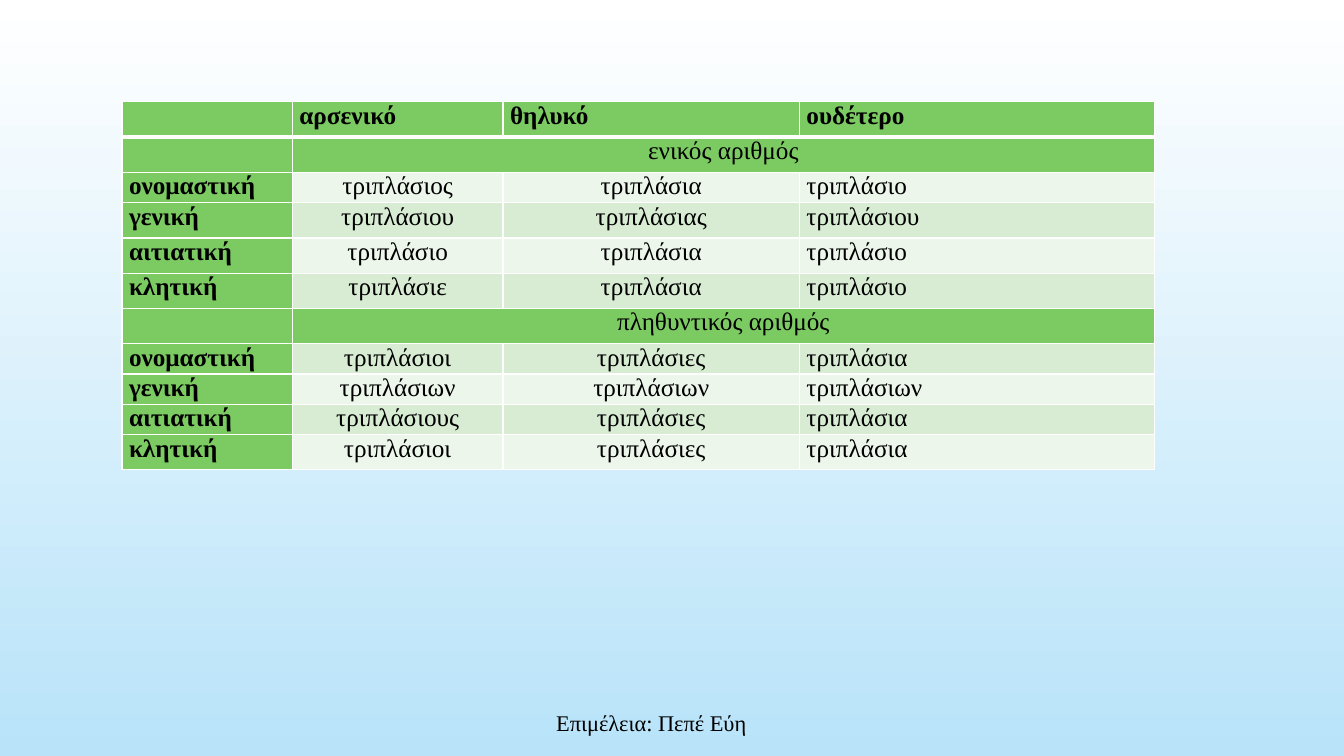
from lxml.etree import SubElement
from pptx import Presentation
from pptx.dml.color import RGBColor
from pptx.enum.text import MSO_ANCHOR, PP_ALIGN
from pptx.oxml.ns import qn
from pptx.util import Inches, Pt

COLORS = {"text": "000000", "line": "FFFFFF", "header": "7CCA62",
          "light": "ECF6EA", "band": "D7ECD3", "sky_top": "FFFFFF", "sky_bottom": "B8E3F9"}
FONT = "Times New Roman"
COLUMN_WIDTHS = [1.69, 2.09, 2.94, 3.52]
TALL, SHORT = 0.35, 0.28
ROW_HEIGHTS = [TALL, TALL, SHORT, TALL, TALL, TALL, TALL, SHORT, SHORT, SHORT, TALL]
NUMBER_ROWS = (1, 6)
DECLENSION = [
    ["", "αρσενικό", "θηλυκό", "ουδέτερο"],
    ["", "ενικός αριθμός", "", ""],
    ["ονομαστική", "τριπλάσιος", "τριπλάσια", "τριπλάσιο"],
    ["γενική", "τριπλάσιου", "τριπλάσιας", "τριπλάσιου"],
    ["αιτιατική", "τριπλάσιο", "τριπλάσια", "τριπλάσιο"],
    ["κλητική", "τριπλάσιε", "τριπλάσια", "τριπλάσιο"],
    ["", "πληθυντικός αριθμός", "", ""],
    ["ονομαστική", "τριπλάσιοι", "τριπλάσιες", "τριπλάσια"],
    ["γενική", "τριπλάσιων", "τριπλάσιων", "τριπλάσιων"],
    ["αιτιατική", "τριπλάσιους", "τριπλάσιες", "τριπλάσια"],
    ["κλητική", "τριπλάσιοι", "τριπλάσιες", "τριπλάσια"],
]


class GrammarSlide:
    def __init__(self, deck):
        self.page = deck.slides.add_slide(deck.slide_layouts[6])

    def color(self, name):
        return RGBColor.from_string(COLORS[name])

    def background(self):
        fill = self.page.background.fill
        fill.gradient()
        fill.gradient_angle = 270
        for stop, position, name in zip(fill.gradient_stops, (0, 1), ("sky_top", "sky_bottom")):
            stop.position = position
            stop.color.rgb = self.color(name)

    def set_text(self, frame, text, size, bold=False, align=PP_ALIGN.LEFT):
        frame.text = text
        para = frame.paragraphs[0]
        para.alignment = align
        for span in para.runs:
            span.font.name = FONT
            span.font.size = Pt(size)
            span.font.bold = bold
            span.font.color.rgb = self.color("text")

    def credit(self, text, left, top, width, height):
        box = self.page.shapes.add_textbox(Inches(left), Inches(top), Inches(width), Inches(height))
        box.text_frame.word_wrap = True
        box.text_frame.vertical_anchor = MSO_ANCHOR.MIDDLE
        self.set_text(box.text_frame, text, 16, align=PP_ALIGN.CENTER)

    def borders(self, cell, bottom):
        properties = cell._tc.get_or_add_tcPr()
        for side, points in (("lnL", 1), ("lnR", 1), ("lnT", 1), ("lnB", bottom)):
            line = SubElement(properties, qn(f"a:{side}"), w=str(Pt(points)))
            solid = SubElement(line, qn("a:solidFill"))
            SubElement(solid, qn("a:srgbClr"), val=COLORS["line"])

    def cell(self, cell, text, row, column):
        heading = row == 0 or column == 0
        centered = not heading and (column < 3 or row in NUMBER_ROWS)
        cell.margin_left = cell.margin_right = Inches(0.07)
        cell.margin_top = cell.margin_bottom = 0
        self.set_text(cell.text_frame, text, 18, heading,
                      PP_ALIGN.CENTER if centered else PP_ALIGN.LEFT)
        self.borders(cell, 3 if row == 0 else 1)
        if heading or row in NUMBER_ROWS:
            name = "header"
        else:
            name = "band" if row % 2 else "light"
        cell.fill.solid()
        cell.fill.fore_color.rgb = self.color(name)

    def table(self, rows, left, top):
        table = self.page.shapes.add_table(
            len(rows), len(COLUMN_WIDTHS), Inches(left), Inches(top),
            Inches(sum(COLUMN_WIDTHS)), Inches(sum(ROW_HEIGHTS))).table
        table.first_row = table.horz_banding = False
        for column, width in zip(table.columns, COLUMN_WIDTHS):
            column.width = Inches(width)
        for row, height in zip(table.rows, ROW_HEIGHTS):
            row.height = Inches(height)
        for row, texts in enumerate(rows):
            for column, text in enumerate(texts):
                self.cell(table.cell(row, column), text, row, column)
        for row in NUMBER_ROWS:
            table.cell(row, 1).merge(table.cell(row, 3))


def main():
    deck = Presentation()
    deck.slide_width, deck.slide_height = Inches(13.33), Inches(7.5)
    slide = GrammarSlide(deck)
    slide.background()
    slide.credit("Επιμέλεια: Πεπέ Εύη", 2.81, 6.97, 7.3, 0.4)
    slide.table(DECLENSION, 1.21, 1.01)
    deck.save("out.pptx")


if __name__ == "__main__":
    main()
